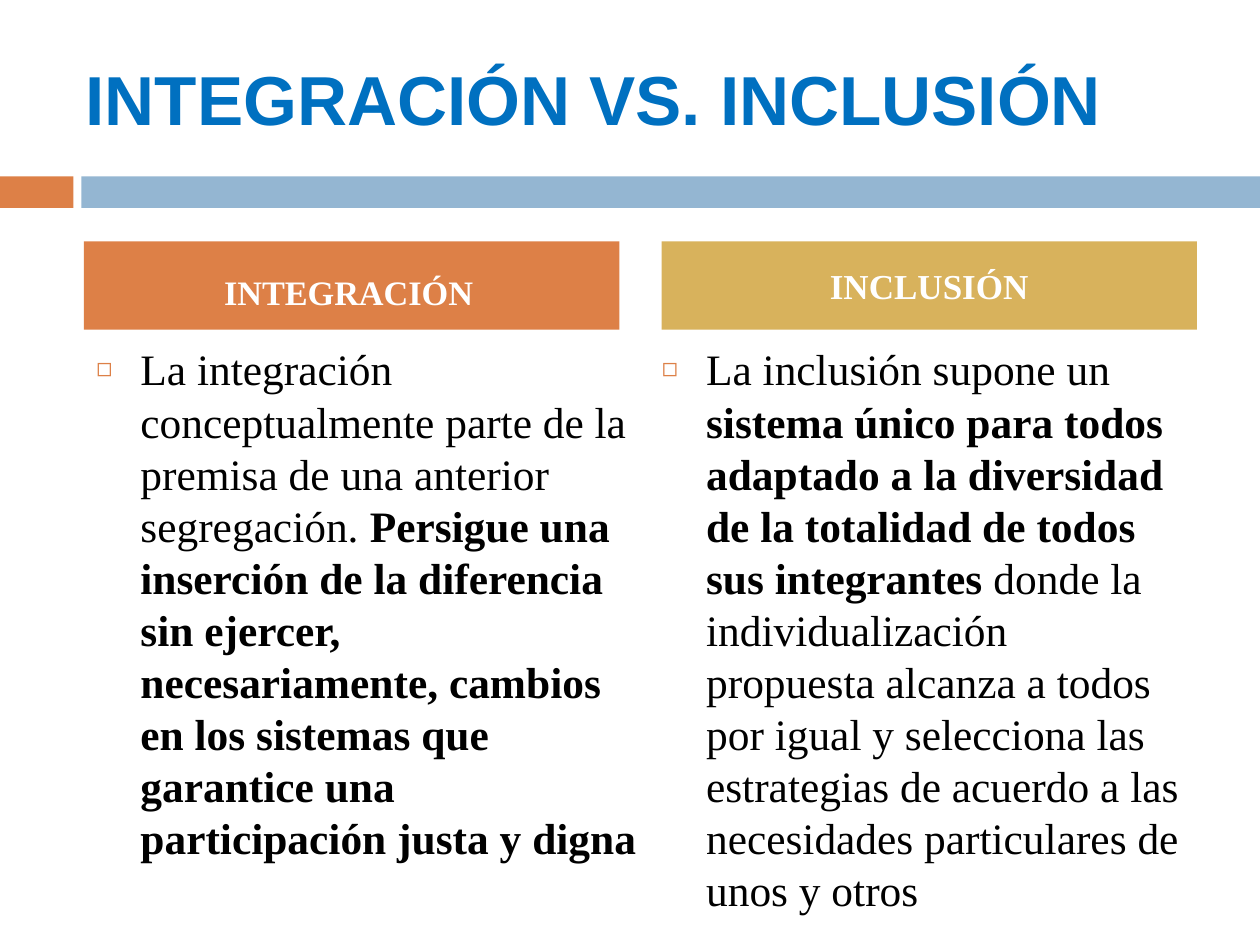
from dataclasses import dataclass

from lxml.etree import SubElement
from pptx import Presentation
from pptx.dml.color import RGBColor
from pptx.enum.shapes import MSO_SHAPE as Shape
from pptx.enum.text import MSO_ANCHOR as Anchor, MSO_AUTO_SIZE as AutoSize, PP_ALIGN as Align
from pptx.oxml.ns import qn
from pptx.util import Pt


@dataclass(frozen=True)
class Theme:
    orange: str = "DD8047"
    blue: str = "94B6D2"
    gold: str = "D8B25C"
    title_color: str = "0070C0"
    text_color: str = "000000"
    light: str = "FFFFFF"
    title_font: str = "Arial"
    body_font: str = "Times New Roman"
    title_size: float = 39.6
    body_size: float = 24.8


def add_span(para, text, *, font, size, color, bold=False):
    span = para.add_run()
    span.text = text
    span.font.name = font
    span.font.size = Pt(size)
    span.font.bold = bold
    span.font.color.rgb = RGBColor.from_string(color)


class PageBuilder:
    def __init__(self, page, theme):
        self.page = page
        self.theme = theme

    def frame(self, box, anchor, top=3.6, right=7.2):
        frame = box.text_frame
        frame.word_wrap = True
        frame.auto_size = AutoSize.NONE
        frame.vertical_anchor = anchor
        frame.margin_left, frame.margin_right = Pt(7.2), Pt(right)
        frame.margin_top, frame.margin_bottom = Pt(top), Pt(3.6)
        return frame

    def title(self, text, left, top, width, height):
        box = self.page.shapes.title
        box.left, box.top, box.width, box.height = map(Pt, (left, top, width, height))
        para = self.frame(box, Anchor.MIDDLE).paragraphs[0]
        para.alignment = Align.LEFT
        add_span(para, text, font=self.theme.title_font, size=self.theme.title_size,
                 color=self.theme.title_color, bold=True)

    def block(self, color, left, top, width, height):
        box = self.page.shapes.add_shape(
            Shape.RECTANGLE, *map(Pt, (left, top, width, height)))
        box.shadow.inherit = False
        box.fill.solid()
        box.fill.fore_color.rgb = RGBColor.from_string(color)
        box.line.fill.background()
        return box

    def heading(self, text, color, left, size, top_inset, right_inset):
        box = self.block(color, left, 138, 306, 50.4)
        para = self.frame(box, Anchor.MIDDLE, top_inset, right_inset).paragraphs[0]
        para.alignment = Align.CENTER
        add_span(para, text, font=self.theme.body_font, size=size,
                 color=self.theme.light, bold=True)

    def body(self, spans, left, width):
        box = self.page.shapes.add_textbox(*map(Pt, (left, 192.2, width, 282.2)))
        para = self.frame(box, Anchor.TOP).paragraphs[0]
        self.bullet(para)
        for text, bold in spans:
            add_span(para, text, font=self.theme.body_font, size=self.theme.body_size,
                     color=self.theme.text_color, bold=bold)

    def bullet(self, para):
        props = para._p.get_or_add_pPr()
        props.set("marL", str(Pt(25.2)))
        props.set("indent", str(-Pt(25.2)))
        color = SubElement(props, qn("a:buClr"))
        SubElement(color, qn("a:srgbClr"), val=self.theme.orange)
        SubElement(props, qn("a:buSzPct"), val="60000")
        SubElement(props, qn("a:buFont"), typeface=self.theme.title_font)
        SubElement(props, qn("a:buChar"), char="◻")


def main():
    deck = Presentation()
    deck.slide_width, deck.slide_height = Pt(720), Pt(540)
    theme = Theme()
    builder = PageBuilder(deck.slides.add_slide(deck.slide_layouts[5]), theme)

    # Band under the title
    builder.block(theme.orange, 0, 100.8, 42, 18)
    builder.block(theme.blue, 46.5, 100.8, 673.5, 18)
    builder.title("INTEGRACIÓN VS. INCLUSIÓN", 41.7, 21.6, 642, 68.4)

    # Column texts
    builder.body([
        ("La integración conceptualmente parte de la premisa de una anterior "
         "segregación. ", False),
        ("Persigue una inserción de la diferencia sin ejercer, necesariamente, "
         "cambios en los sistemas que garantice una participación justa y digna", True),
    ], 48, 323.5)
    builder.body([
        ("La inclusión supone un ", False),
        ("sistema único para todos adaptado a la diversidad de la totalidad de "
         "todos sus integrantes", True),
        (" donde la individualización propuesta alcanza a todos por igual y "
         "selecciona las estrategias de acuerdo a las necesidades particulares "
         "de unos y otros", False),
    ], 371.2, 312.8)

    # Column headings
    builder.heading("INTEGRACIÓN", theme.orange, 48, 19.6, 10.3, 10.7)
    builder.heading("INCLUSIÓN", theme.gold, 378, 20, 3.4, 7.2)

    deck.save("out.pptx")


if __name__ == "__main__":
    main()
